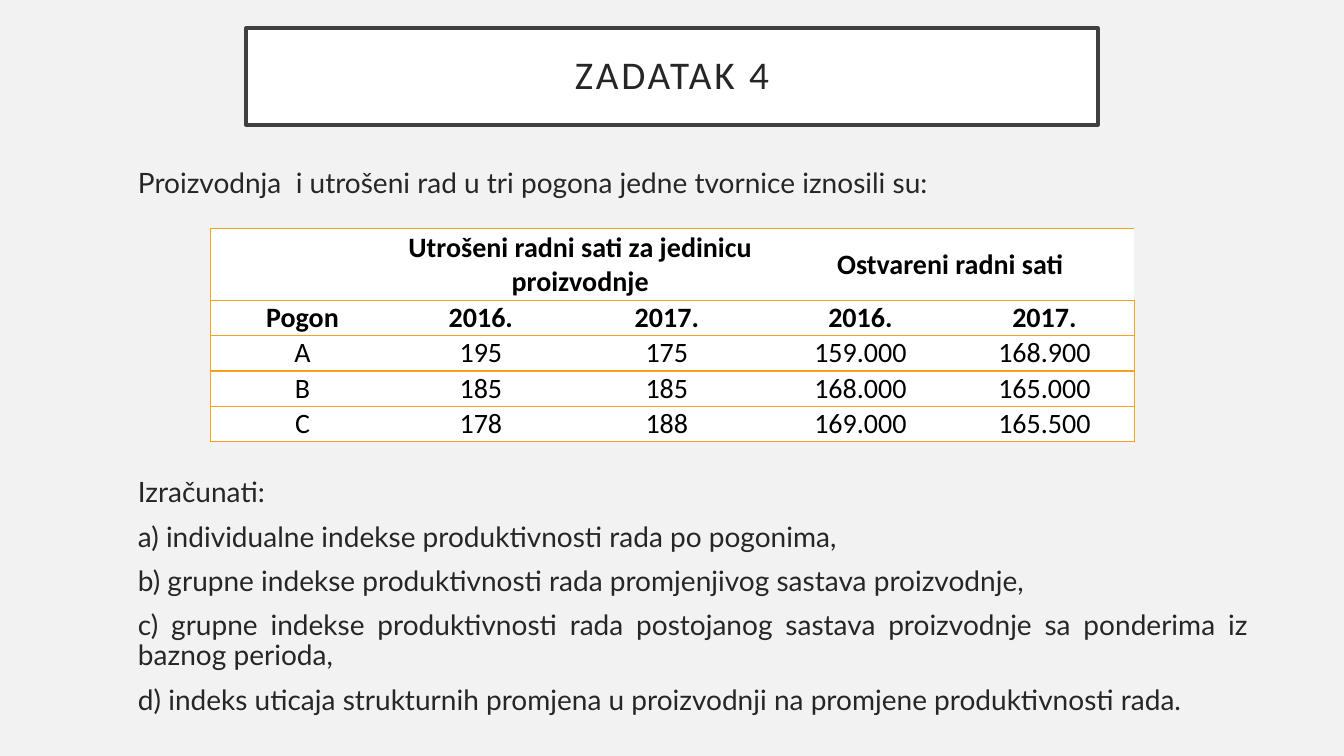
from lxml.etree import SubElement as Sub
from pptx import Presentation
from pptx.dml.color import RGBColor
from pptx.enum.shapes import MSO_SHAPE as Shape
from pptx.enum.text import MSO_ANCHOR as Anchor, PP_ALIGN as Align
from pptx.oxml.ns import qn
from pptx.util import Inches, Pt

INK = "262626"
GOLD = "F6A21D"
TASKS = [
    "a) individualne indekse produktivnosti rada po pogonima,",
    "b) grupne indekse produktivnosti rada promjenjivog sastava proizvodnje,",
    "c) grupne indekse produktivnosti rada postojanog sastava proizvodnje sa ponderima iz baznog perioda,",
    "d) indeks uticaja strukturnih promjena u proizvodnji na promjene produktivnosti rada.",
]
WIDTHS = [1.82, 1.72, 1.97, 1.87, 1.78]
HEIGHTS = [0.71] + [0.35] * 4
ROWS = [
    ["", "Utrošeni radni sati za jedinicu proizvodnje", "", "Ostvareni radni sati", ""],
    ["Pogon", "2016.", "2017.", "2016.", "2017."],
    ["A", "195", "175", "159.000", "168.900"],
    ["B", "185", "185", "168.000", "165.000"],
    ["C", "178", "188", "169.000", "165.500"],
]


def paint(fill, color):
    fill.solid()
    fill.fore_color.rgb = RGBColor.from_string(color)


def style(para, size, name, color, align, bold=False):
    para.alignment = align
    font = para.font
    font.size, font.name, font.bold = Pt(size), name, bold
    font.color.rgb = RGBColor.from_string(color)


def add_title(slide, box, text):
    frame = slide.shapes.add_shape(Shape.RECTANGLE, *map(Inches, box))
    frame.shadow.inherit = False
    paint(frame.fill, "FFFFFF")
    paint(frame.line.fill, "404040")
    frame.line.width = Pt(2.5)
    body = frame.text_frame
    body.word_wrap = True
    body.vertical_anchor = Anchor.MIDDLE
    para = body.paragraphs[0]
    para.text = text
    para.line_spacing = 0.9
    style(para, 28, "Calibri", INK, Align.CENTER)
    para.runs[0].font._element.set("spc", "200")


def add_body(slide, box, lines):
    body = slide.shapes.add_textbox(*map(Inches, box)).text_frame
    body.word_wrap = True
    for i, (text, align) in enumerate(lines):
        para = body.add_paragraph() if i else body.paragraphs[0]
        para.text = text
        para.line_spacing = 0.9
        para.space_before = Pt(10 if i else 0)
        para._p.get_or_add_pPr().set("marL", str(Inches(0.12)))
        style(para, 20, "Lato", INK, align)


def edge(cell, sides):
    props = cell._tc.get_or_add_tcPr()
    for side in "LRTB":
        line = Sub(props, qn("a:ln" + side), w=str(Pt(1)))
        if side in sides:
            Sub(Sub(line, qn("a:solidFill")), qn("a:srgbClr"), val=GOLD)
        else:
            Sub(line, qn("a:noFill"))


def add_grid(slide, box, rows):
    grid = slide.shapes.add_table(len(rows), len(WIDTHS), *map(Inches, box)).table
    grid.first_row = grid.horz_banding = False
    for col, width in zip(grid.columns, WIDTHS):
        col.width = Inches(width)
    for row, height in zip(grid.rows, HEIGHTS):
        row.height = Inches(height)
    for r, row in enumerate(rows):
        for c, text in enumerate(row):
            cell = grid.cell(r, c)
            edge(cell, "TB" + {0: "L", len(row) - 1: "R"}.get(c, ""))
            paint(cell.fill, "FFFFFF")
            cell.margin_left = cell.margin_right = Inches(0.07)
            cell.margin_top = cell.margin_bottom = 0
            cell.vertical_anchor = Anchor.MIDDLE
            cell.text = text
            style(cell.text_frame.paragraphs[0], 20, "Calibri", "000000", Align.CENTER, r < 2)
    for c in (1, 3):
        grid.cell(0, c).merge(grid.cell(0, c + 1))


def main():
    deck = Presentation()
    deck.slide_width, deck.slide_height = Inches(13.33), Inches(7.5)
    slide = deck.slides.add_slide(deck.slide_layouts[6])
    paint(slide.background.fill, "F2F2F2")
    add_title(slide, (2.44, 0.28, 8.45, 0.96), "ZADATAK 4")
    intro = "Proizvodnja  i utrošeni rad u tri pogona jedne tvornice iznosili su:"
    add_body(slide, (1.15, 1.63, 11.33, 0.5), [(intro, Align.LEFT)])
    add_grid(slide, (2.09, 2.27, sum(WIDTHS), sum(HEIGHTS)), ROWS)
    tasks = [(task, Align.JUSTIFY) for task in TASKS]
    add_body(slide, (1.15, 4.7, 11.33, 2.8), [("Izračunati:", Align.LEFT)] + tasks)
    deck.save("out.pptx")


if __name__ == "__main__":
    main()
